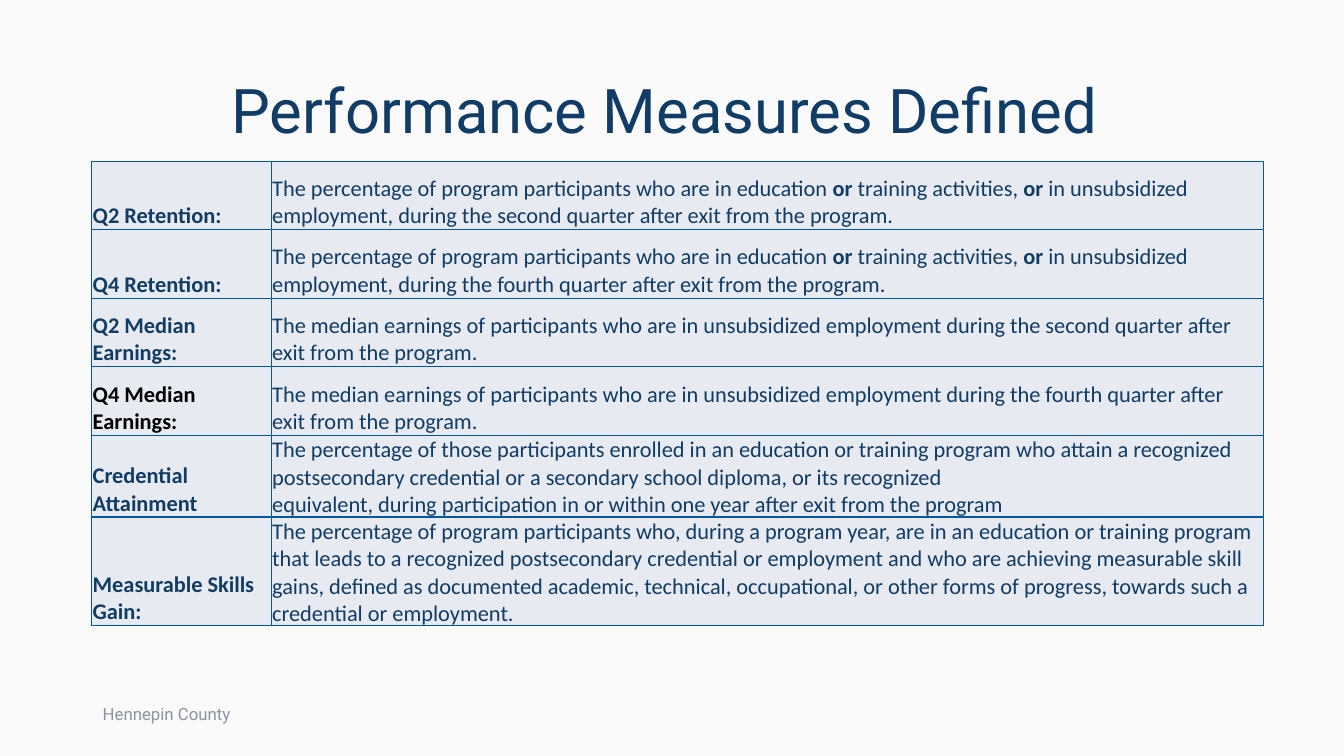
from lxml import etree
from pptx import Presentation
from pptx import util as u
from pptx.dml.color import RGBColor
from pptx.enum import text
from pptx.oxml import ns

COLORS = {"page": "FAFAFA", "navy": "113C66", "gray": "8C92A0",
          "cell": "E7EAF0", "border": "0058A3", "black": "000000"}

RETENTION = ("The percentage of program participants who are in education *or* training "
             "activities, *or* in unsubsidized employment, during the {} quarter after "
             "exit from the program.")
EARNINGS = ("The median earnings of participants who are in unsubsidized employment "
            "during the {} quarter after exit from the program.")
CREDENTIAL = ("The percentage of those participants enrolled in an education or training "
              "program who attain a recognized postsecondary credential or a secondary "
              "school diploma, or its recognized\n"
              "equivalent, during participation in or within one year after exit from "
              "the program")
SKILLS = ("The percentage of program participants who, during a program year, are in an "
          "education or training program that leads to a recognized postsecondary "
          "credential or employment and who are achieving measurable skill gains, defined "
          "as documented academic, technical, occupational, or other forms of progress, "
          "towards such a credential or employment.")

MEASURES = [
    ("Q2 Retention:", RETENTION.format("second"), "navy", 0.68),
    ("Q4 Retention:", RETENTION.format("fourth"), "navy", 0.68),
    ("Q2 Median Earnings:", EARNINGS.format("second"), "navy", 0.68),
    ("Q4 Median Earnings:", EARNINGS.format("fourth"), "black", 0.68),
    ("Credential Attainment", CREDENTIAL, "navy", 0.75),
    ("Measurable Skills Gain:", SKILLS, "navy", 0.99),
]


class SlideBuilder:
    """Holds the style and the current slide, and adds each kind of element."""

    def __init__(self, deck):
        self.page = deck.slides.add_slide(deck.slide_layouts[6])
        self.paint(self.page.background.fill, "page")

    def paint(self, target, color):
        target.solid()
        target.fore_color.rgb = RGBColor.from_string(COLORS[color])

    def add_words(self, frame, words, font, size, color, paragraph=None):
        for index, line in enumerate(words.split("\n")):
            para = frame.add_paragraph() if index else frame.paragraphs[0]
            for name, value in (paragraph or {}).items():
                setattr(para, name, value)
            for part, piece in enumerate(line.split("*")):
                if not piece:
                    continue
                span = para.add_run()
                span.text = piece
                style = {"name": font, "size": u.Pt(size), "bold": part % 2 == 1}
                for name, value in style.items():
                    setattr(span.font, name, value)
                span.font.color.rgb = RGBColor.from_string(COLORS[color])

    def add_label(self, area, words, size, color, paragraph=None):
        box = self.page.shapes.add_textbox(*map(u.Inches, area))
        frame = box.text_frame
        frame.word_wrap = True
        frame.vertical_anchor = text.MSO_ANCHOR.MIDDLE
        self.add_words(frame, words, "Roboto", size, color, paragraph)

    def add_borders(self, cell):
        properties = cell._tc.get_or_add_tcPr()
        for side in ("a:lnL", "a:lnR", "a:lnT", "a:lnB"):
            line = etree.SubElement(properties, ns.qn(side), w=str(u.Pt(1)))
            solid = etree.SubElement(line, ns.qn("a:solidFill"))
            etree.SubElement(solid, ns.qn("a:srgbClr"), val=COLORS["border"])

    def fill_cell(self, cell, words, color):
        margin = u.Inches(0.01)
        style = {"margin_left": margin, "margin_right": margin, "margin_top": margin,
                 "margin_bottom": 0, "vertical_anchor": text.MSO_ANCHOR.BOTTOM}
        for name, value in style.items():
            setattr(cell, name, value)
        self.add_borders(cell)
        self.paint(cell.fill, "cell")
        self.add_words(cell.text_frame, words, "Calibri", 16, color)

    def add_measures(self, area, widths, measures):
        shape = self.page.shapes.add_table(len(measures), len(widths), *map(u.Inches, area))
        table = shape.table
        table.first_row = table.horz_banding = False
        for column, width in zip(table.columns, widths):
            column.width = u.Inches(width)
        for index, (measure, definition, color, height) in enumerate(measures):
            table.rows[index].height = u.Inches(height)
            self.fill_cell(table.cell(index, 0), f"*{measure}*", color)
            self.fill_cell(table.cell(index, 1), definition, "navy")


def main():
    deck = Presentation()
    deck.slide_width, deck.slide_height = u.Inches(13.33), u.Inches(7.5)
    slide = SlideBuilder(deck)
    slide.add_label((0.92, 0.4, 11.5, 1.45), "Performance Measures Defined ", 44, "navy",
                    {"alignment": text.PP_ALIGN.CENTER, "line_spacing": 0.9})
    slide.add_label((0.92, 6.88, 4.09, 0.4), "Hennepin County", 12, "gray")
    slide.add_measures((0.91, 1.6, 11.62, 4.46), (1.78, 9.84), MEASURES)
    deck.save("out.pptx")


if __name__ == "__main__":
    main()
